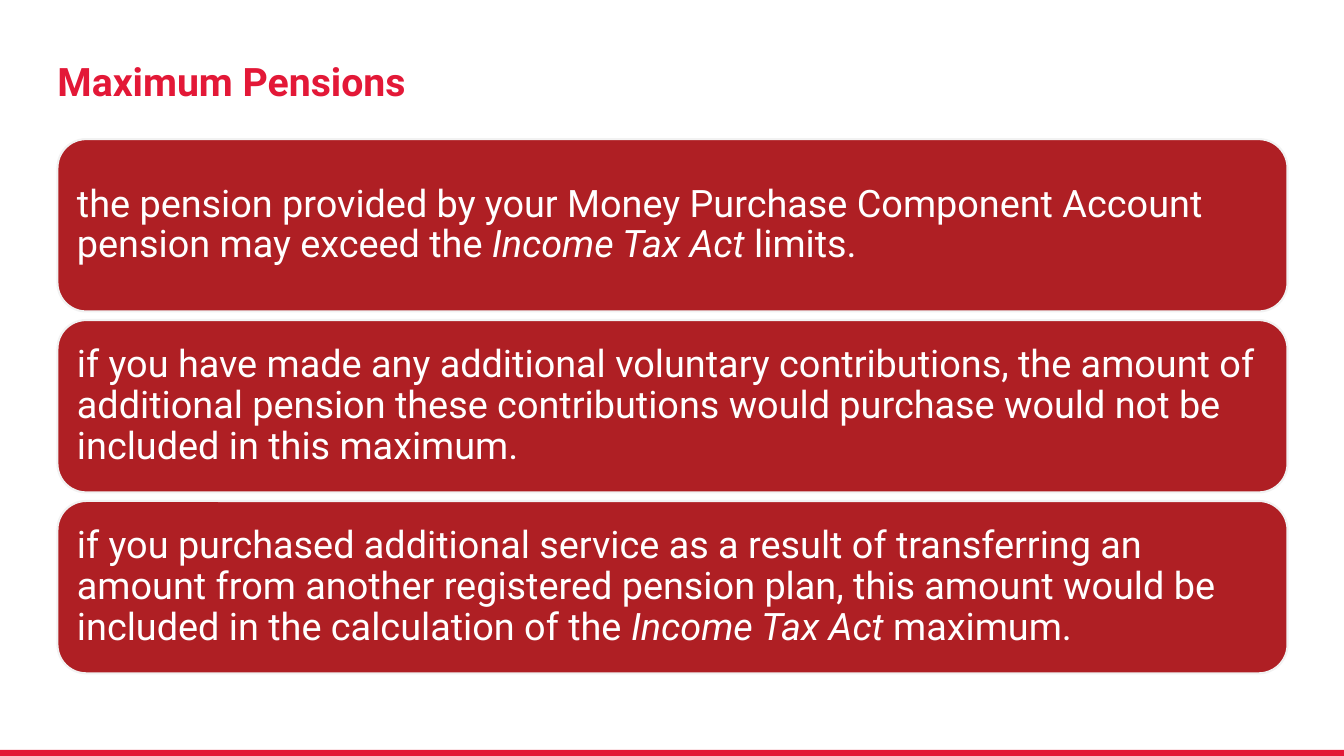
from pptx import Presentation
from pptx.dml.color import RGBColor
from pptx.enum.shapes import MSO_SHAPE as SHAPE
from pptx.enum.text import MSO_ANCHOR as ANCHOR, PP_ALIGN as ALIGN
from pptx.util import Inches, Pt

TITLE = "Maximum Pensions"
ACT = ("Income Tax Act ", True)
CARDS = [
    [("the pension provided by your Money Purchase Component Account "
      "pension may exceed the ", False), ACT, ("limits.", False)],
    [("if you have made any additional voluntary contributions, the amount of "
      "additional pension these contributions would purchase would not be "
      "included in this maximum.", False)],
    [("if you purchased additional service as a result of transferring an "
      "amount from another registered pension plan, this amount would be "
      "included in the calculation of the ", False), ACT, ("maximum.", False)],
]

FONT = "Roboto"
RED = RGBColor(0xE3, 0x18, 0x37)
DARK_RED = RGBColor(0xAF, 0x1F, 0x24)
PALE = RGBColor(0xF2, 0xF2, 0xF2)
WHITE = RGBColor(0xFF, 0xFF, 0xFF)

WIDTH, HEIGHT = 13.33, 7.5
MARGIN = 0.57
CARD_TOP, CARD_W, CARD_H, CARD_STEP = 1.38, 12.2, 1.71, 1.795
BAR_H = 0.06


def write(sp, runs, size, color, bold=False, anchor=ANCHOR.MIDDLE, inset=0, spacing=0.9):
    tf = sp.text_frame
    tf.word_wrap = True
    tf.vertical_anchor = anchor
    tf.margin_left = tf.margin_right = tf.margin_top = tf.margin_bottom = Inches(inset)
    p = tf.paragraphs[0]
    p.alignment = ALIGN.LEFT
    p.line_spacing = spacing
    for text, italic in runs:
        r = p.add_run()
        r.text = text
        r.font.name = FONT
        r.font.size = Pt(size)
        r.font.bold = bold
        r.font.italic = italic
        r.font.color.rgb = color


def add_block(s, kind, box, fill, line=None):
    sp = s.shapes.add_shape(kind, *map(Inches, box))
    sp.shadow.inherit = False
    sp.fill.solid()
    sp.fill.fore_color.rgb = fill
    if line is None:
        sp.line.fill.background()
    else:
        sp.line.color.rgb = line
        sp.line.width = Pt(1.5)
    return sp


prs = Presentation()
prs.slide_width, prs.slide_height = Inches(WIDTH), Inches(HEIGHT)
s = prs.slides.add_slide(prs.slide_layouts[5])

add_block(s, SHAPE.RECTANGLE, (0, HEIGHT - BAR_H, WIDTH, BAR_H), RED)

title = s.shapes.title
title.left, title.top, title.width, title.height = map(Inches, (MARGIN, 0.25, 12.21, 0.79))
write(title, [(TITLE, False)], 28, RED, bold=True, anchor=ANCHOR.BOTTOM, spacing=0.85)

for row, runs in enumerate(CARDS):
    box = (MARGIN, CARD_TOP + row * CARD_STEP, CARD_W, CARD_H)
    card = add_block(s, SHAPE.ROUNDED_RECTANGLE, box, DARK_RED, PALE)
    write(card, runs, 27, WHITE, inset=0.11)

prs.save("out.pptx")
